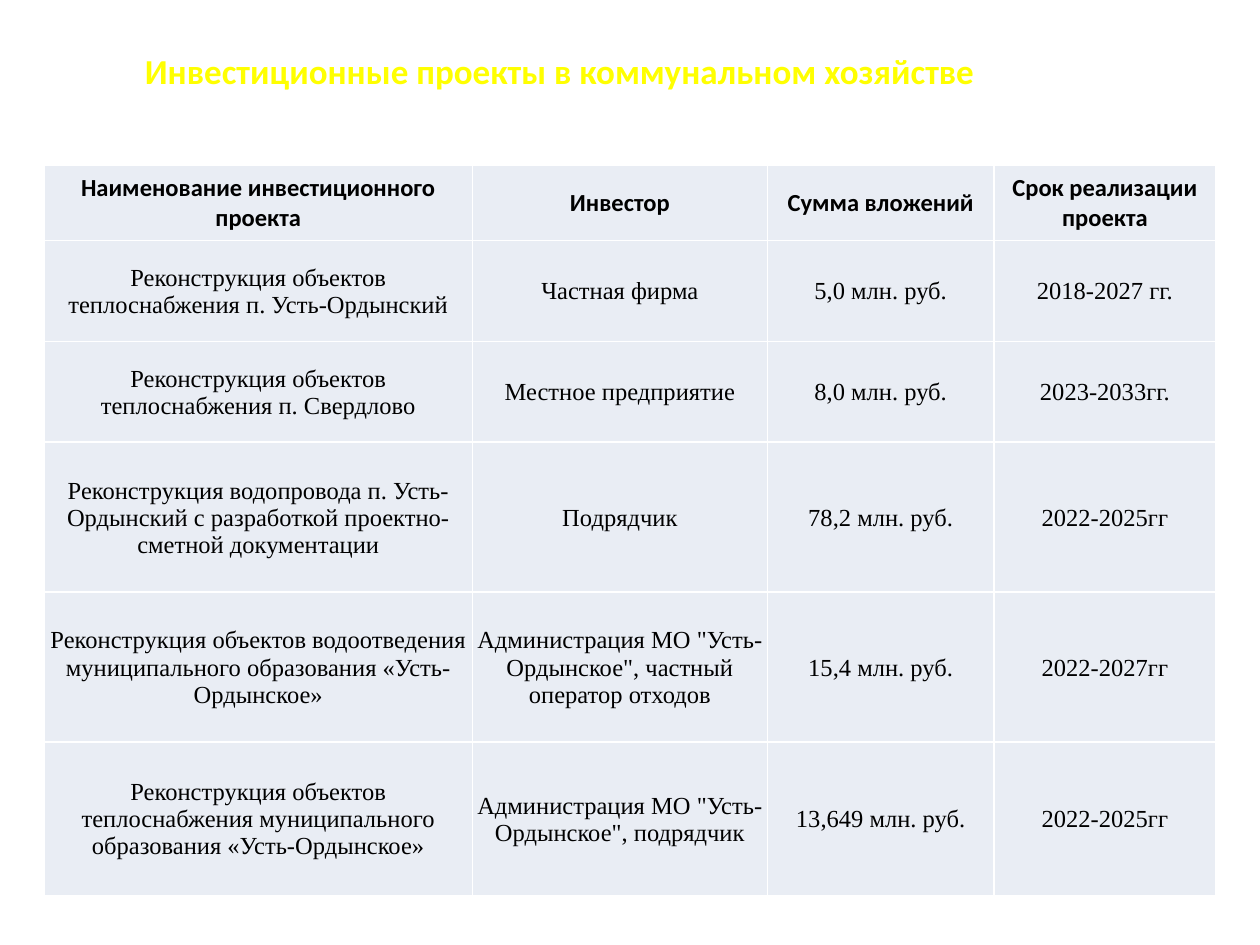
"""Build the slide on investment projects in public utilities."""
from lxml.etree import SubElement
from pptx import Presentation
from pptx.dml.color import RGBColor
from pptx.enum.text import MSO_ANCHOR, PP_ALIGN
from pptx.oxml.ns import qn
from pptx.util import Inches, Pt

YELLOW = RGBColor(0xFF, 0xFF, 0x00)
BLACK = RGBColor(0x00, 0x00, 0x00)
PALE = RGBColor(0xE9, 0xED, 0xF4)
WHITE = RGBColor(0xFF, 0xFF, 0xFF)

COLS = [3.4, 2.34, 1.8, 1.76]
HIGHS = [0.6, 0.8, 0.8, 1.19, 1.19, 1.22]
ROWS = [
    ["Наименование инвестиционного проекта", "Инвестор",
     "Сумма вложений", "Срок реализации проекта"],
    ["Реконструкция объектов теплоснабжения п. Усть-Ордынский",
     "Частная фирма", "5,0 млн. руб.", "2018-2027 гг."],
    ["Реконструкция объектов теплоснабжения п. Свердлово",
     "Местное предприятие", "8,0 млн. руб.", "2023-2033гг."],
    ["Реконструкция водопровода п. Усть-Ордынский с разработкой "
     "проектно-сметной документации",
     "Подрядчик", "78,2 млн. руб.", "2022-2025гг"],
    ["Реконструкция объектов водоотведения муниципального образования "
     "«Усть-Ордынское»",
     'Администрация МО "Усть-Ордынское", частный оператор отходов',
     "15,4 млн. руб.", "2022-2027гг"],
    ["Реконструкция объектов теплоснабжения муниципального образования "
     "«Усть-Ордынское»",
     'Администрация МО "Усть-Ордынское", подрядчик',
     "13,649 млн. руб.", "2022-2025гг"],
]


def write(frame, text, size=14, face="Calibri", color=BLACK, bold=True,
          align=PP_ALIGN.CENTER):
    para = frame.paragraphs[0]
    para.alignment = align
    run = para.add_run()
    run.text = text
    font = run.font
    font.size = Pt(size)
    font.name = face
    font.bold = bold
    font.color.rgb = color


def edge(cell):
    props = cell._tc.get_or_add_tcPr()
    for spot, side in enumerate(["lnL", "lnR", "lnT", "lnB"]):
        line = props.makeelement(qn(f"a:{side}"), {"w": str(Pt(1))})
        fill = SubElement(line, qn("a:solidFill"))
        SubElement(fill, qn("a:srgbClr"), val=str(WHITE))
        props.insert(spot, line)


deck = Presentation()
deck.slide_width = Inches(10)
deck.slide_height = Inches(7.5)
slide = deck.slides.add_slide(deck.slide_layouts[6])

title = slide.shapes.add_textbox(Inches(0.75), Inches(0.29),
                                 Inches(8.35), Inches(0.51))
frame = title.text_frame
frame.word_wrap = True
frame.margin_left = Inches(0.4)
frame.margin_top = Inches(0.1)
write(frame, "Инвестиционные проекты в коммунальном хозяйстве",
      size=20, color=YELLOW, align=PP_ALIGN.JUSTIFY)

table = slide.shapes.add_table(len(ROWS), len(COLS), Inches(0.35), Inches(1.31),
                               Inches(sum(COLS)), Inches(sum(HIGHS))).table
for col, width in zip(table.columns, COLS):
    col.width = Inches(width)
for row, high in zip(table.rows, HIGHS):
    row.height = Inches(high)

for r, texts in enumerate(ROWS):
    for c, text in enumerate(texts):
        cell = table.cell(r, c)
        cell.fill.solid()
        cell.fill.fore_color.rgb = PALE
        cell.vertical_anchor = MSO_ANCHOR.MIDDLE
        cell.margin_left = cell.margin_right = cell.margin_top = Inches(0.01)
        cell.margin_bottom = Inches(0)
        edge(cell)
        write(cell.text_frame, text, bold=r == 0,
              face="Times New Roman" if r else "Calibri")

deck.save("out.pptx")
